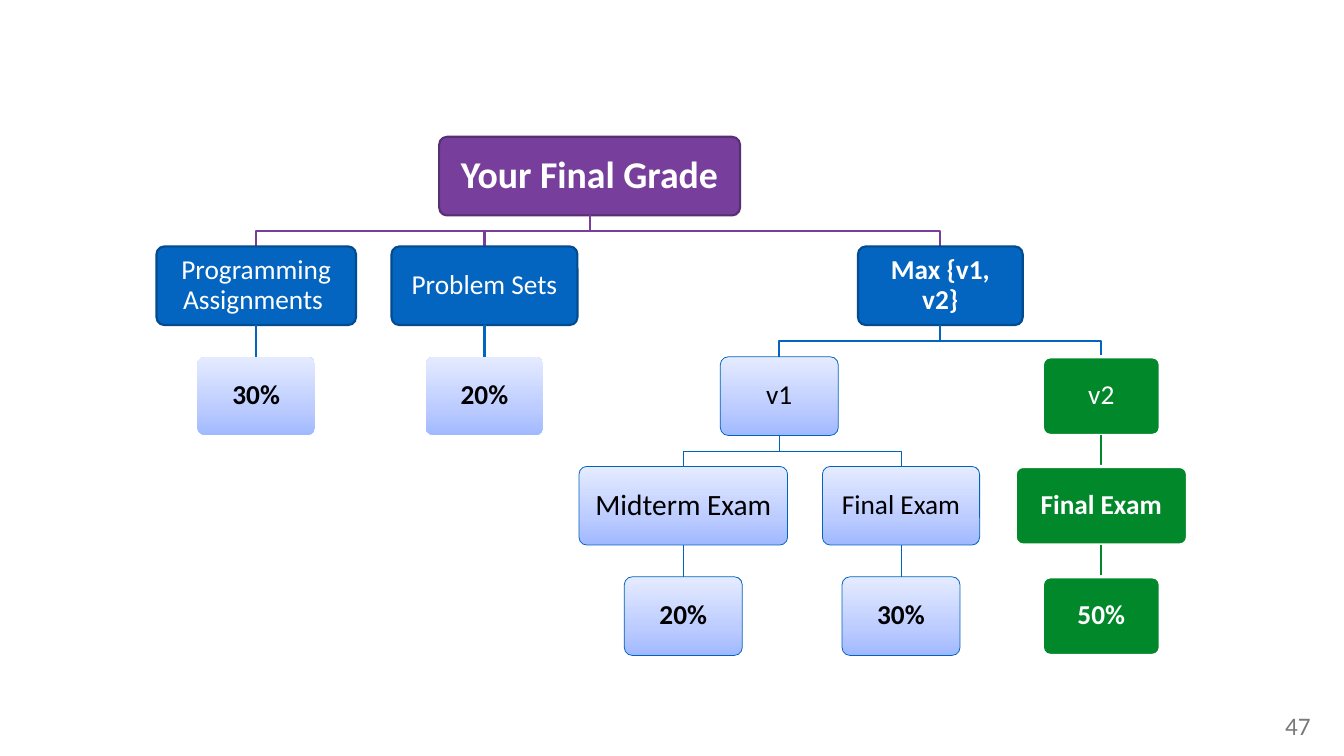
from copy import deepcopy

from lxml import etree
from pptx import Presentation
from pptx.dml.color import RGBColor
from pptx.enum.shapes import MSO_CONNECTOR, MSO_SHAPE
from pptx.enum.text import MSO_ANCHOR, PP_ALIGN
from pptx.oxml.ns import qn
from pptx.util import Inches, Pt

ROUNDED = MSO_SHAPE.ROUNDED_RECTANGLE
STRAIGHT = MSO_CONNECTOR.STRAIGHT
MIDDLE = MSO_ANCHOR.MIDDLE
CENTER = PP_ALIGN.CENTER

FONT = "Calibri"
LEVEL_TOPS = [1.81, 3.26, 4.72, 6.17, 7.63]
BOX_HEIGHT = 1.04
PALE_STOPS = [(0, "A0B8FF"), (0.35, "BCCCFF"), (1, "E5EBFF")]

# Style: fill (None = pale gradient), outline, outline width, text colour
STYLES = {
    "purple": ("773F9B", "582F73", 2, "FFFFFF"),
    "blue": ("0365C0", "024B8E", 2, "FFFFFF"),
    "pale": (None, None, 0, "000000"),
    "outlined": (None, "0063BF", 0.75, "000000"),
    "green": ("00882B", "FFFFFF", 3, "FFFFFF"),
}
# Links down from a level: colour and width by the style of the parent
LINKS = {"purple": ("773F9B", 2), "blue": ("0365C0", 2),
         "outlined": ("0063BF", 0.75), "green": ("00882B", 2)}

# Node: key, parent, level, centre, width, text, style, size, bold, inset
NODES = [
    ("grade", None, 0, 7.8, 3.98, "Your Final Grade", "purple", 36, True, 0.18),
    ("programming", "grade", 1, 3.39, 2.64, "Programming Assignments ", "blue", 26, False, 0.14),
    ("programming share", "programming", 2, 3.39, 1.56, "30%", "pale", 26, True, 0.14),
    ("problems", "grade", 1, 6.41, 2.46, "Problem Sets", "blue", 26, False, 0.14),
    ("problems share", "problems", 2, 6.41, 1.56, "20%", "pale", 26, True, 0.14),
    ("max", "grade", 1, 12.44, 2.18, "Max {v1, v2}", "blue", 26, True, 0.14),
    ("v1", "max", 2, 10.31, 1.56, "v1", "outlined", 26, False, 0.14),
    ("midterm", "v1", 3, 9.04, 2.76, "Midterm Exam", "outlined", 28, False, 0.15),
    ("midterm share", "midterm", 4, 9.04, 1.56, "20%", "outlined", 26, True, 0.14),
    ("v1 final", "v1", 3, 11.92, 2.08, "Final Exam", "outlined", 26, False, 0.14),
    ("v1 final share", "v1 final", 4, 11.92, 1.56, "30%", "outlined", 26, True, 0.14),
    ("v2", "max", 2, 14.57, 1.56, "v2", "green", 26, False, 0.14),
    ("v2 final", "v2", 3, 14.57, 2.28, "Final Exam", "green", 26, True, 0.14),
    ("v2 final share", "v2 final", 4, 14.57, 1.56, "50%", "green", 26, True, 0.14),
]


def color(value):
    return RGBColor.from_string(value)


presentation = Presentation()
presentation.slide_width = Inches(17.78)
presentation.slide_height = Inches(10)
slide = presentation.slides.add_slide(presentation.slide_layouts[6])

# Slide number
number_box = slide.shapes.add_textbox(Inches(16.94), Inches(9.39), Inches(0.46), Inches(0.5))
frame = number_box.text_frame
frame.margin_left = frame.margin_right = frame.margin_top = frame.margin_bottom = 0
frame.word_wrap = False
paragraph = frame.paragraphs[0]
paragraph.text = "47"
paragraph.alignment = CENTER
paragraph.font.name = FONT
paragraph.font.size = Pt(24)
paragraph.font.color.rgb = color("7A7A7A")

# Grade tree: each link lies behind the box it leads to
boxes = {}
for key, parent, level, center, width, text, style, size, bold, inset in NODES:
    fill_color, line_color, line_width, text_color = STYLES[style]
    top = LEVEL_TOPS[level]

    # Link from the parent: straight below it, otherwise with two bends
    link = None
    if parent:
        parent_box, parent_center, parent_style = boxes[parent]
        start_y = LEVEL_TOPS[level - 1] + BOX_HEIGHT
        bend_y = (start_y + top) / 2
        if center == parent_center:
            link = slide.shapes.add_connector(
                STRAIGHT, Inches(center), Inches(start_y), Inches(center), Inches(top))
            link.begin_connect(parent_box, 2)
            etree.SubElement(link._element.spPr, qn("a:effectLst"))
            link_line = link.line
        else:
            builder = slide.shapes.build_freeform(Inches(parent_center), Inches(start_y))
            builder.add_line_segments(
                [(Inches(x), Inches(y)) for x, y in
                 ((parent_center, bend_y), (center, bend_y), (center, top))], close=False)
            elbow = builder.convert_to_shape()
            elbow.fill.background()
            elbow.shadow.inherit = False
            link_line = elbow.line
        link_color, link_width = LINKS[parent_style]
        link_line.color.rgb = color(link_color)
        link_line.width = Pt(link_width)

    # Box
    box = slide.shapes.add_shape(
        ROUNDED, Inches(center - width / 2), Inches(top), Inches(width), Inches(BOX_HEIGHT))
    box.adjustments[0] = 0.1
    box.shadow.inherit = False
    if fill_color:
        box.fill.solid()
        box.fill.fore_color.rgb = color(fill_color)
    else:
        box.fill.gradient()
        box.fill.gradient_angle = 90
        stop_list = box._element.spPr.find(".//" + qn("a:gsLst"))
        stop_list.append(deepcopy(stop_list[0]))
        for stop, (position, stop_color) in zip(box.fill.gradient_stops, PALE_STOPS):
            stop.position = position
            stop.color.rgb = color(stop_color)
    if line_color:
        box.line.color.rgb = color(line_color)
        box.line.width = Pt(line_width)
    else:
        box.line.fill.background()
    if link is not None:
        link.end_connect(box, 0)
    boxes[key] = (box, center, style)

    # Label
    frame = box.text_frame
    frame.margin_left = frame.margin_right = Inches(inset)
    frame.margin_top = frame.margin_bottom = Inches(inset)
    frame.word_wrap = True
    frame.vertical_anchor = MIDDLE
    paragraph = frame.paragraphs[0]
    paragraph.text = text
    paragraph.alignment = CENTER
    paragraph.line_spacing = 0.9
    paragraph.font.name = FONT
    paragraph.font.size = Pt(size)
    paragraph.font.bold = bold
    paragraph.font.color.rgb = color(text_color)

presentation.save("out.pptx")
